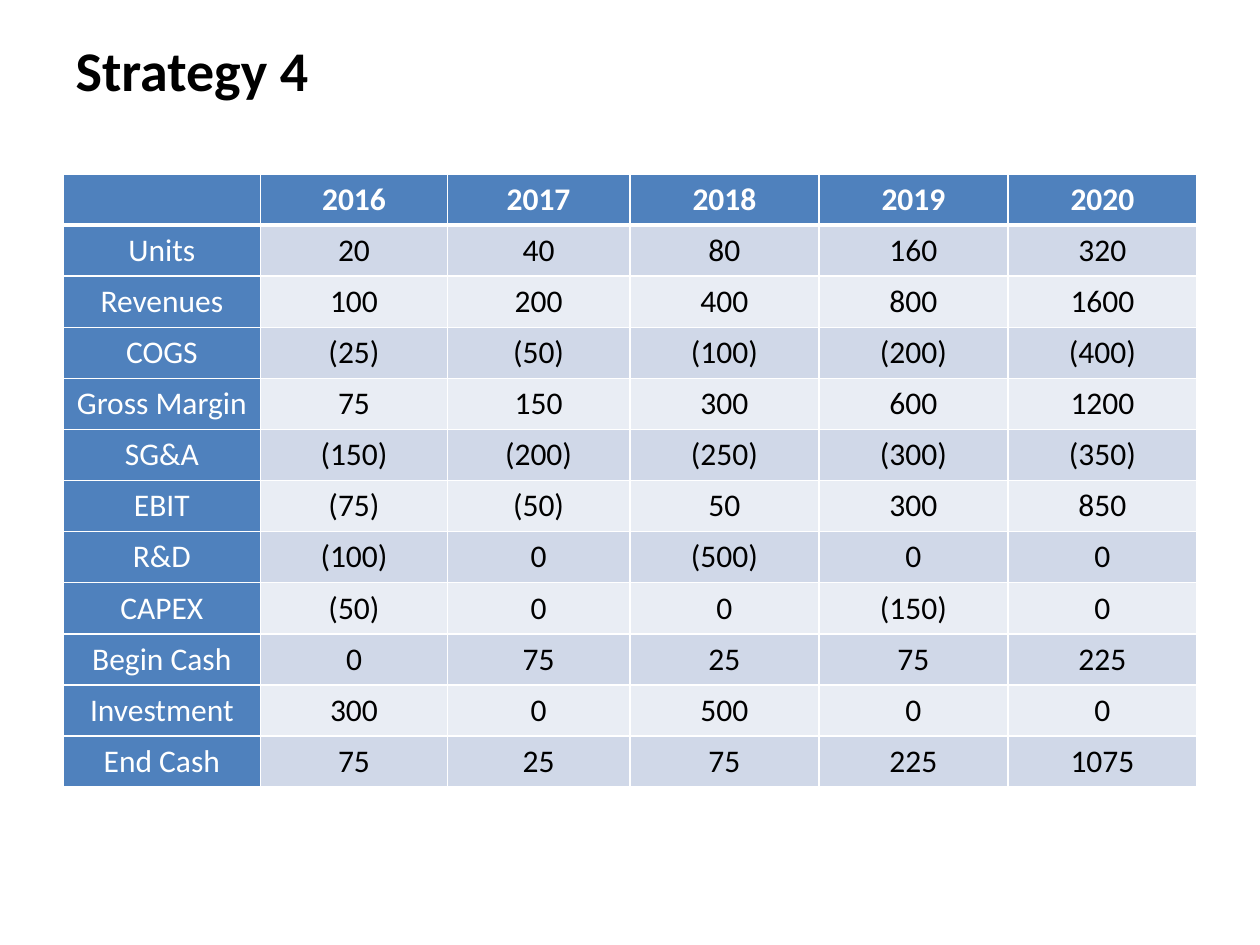
from dataclasses import dataclass

from lxml import etree
from pptx import Presentation
from pptx.dml.color import RGBColor
from pptx.enum.text import MSO_ANCHOR, PP_ALIGN
from pptx.oxml.ns import qn
from pptx.util import Pt

LEFT, CENTER = PP_ALIGN.LEFT, PP_ALIGN.CENTER
MIDDLE = MSO_ANCHOR.MIDDLE
TITLE_ONLY = 5


@dataclass
class Theme:
    font: str = "Calibri"
    title_size: float = 32
    table_size: float = 18
    text: str = "000000"
    light_text: str = "FFFFFF"
    header_fill: str = "4F81BD"
    bands: tuple = ("D0D8E8", "E9EDF4")
    border: str = "FFFFFF"
    thin_border: float = 1
    thick_border: float = 3


class SlideBuilder:
    def __init__(self, slide, theme):
        self.slide = slide
        self.theme = theme

    def format_runs(self, paragraph, size, color, bold=False):
        for run in paragraph.runs:
            run.font.name = self.theme.font
            run.font.size = Pt(size)
            run.font.bold = bold
            run.font.color.rgb = RGBColor.from_string(color)

    def title(self, text, left, top, width, height):
        shape = self.slide.shapes.title
        shape.left, shape.top = Pt(left), Pt(top)
        shape.width, shape.height = Pt(width), Pt(height)
        shape.text_frame.text = text
        shape.text_frame.vertical_anchor = MIDDLE
        paragraph = shape.text_frame.paragraphs[0]
        paragraph.alignment = LEFT
        self.format_runs(paragraph, self.theme.title_size, self.theme.text, bold=True)

    def cell_borders(self, cell, **widths):
        properties = cell._tc.get_or_add_tcPr()
        for side in ("L", "R", "T", "B"):
            width = widths.get(side, self.theme.thin_border)
            line = etree.SubElement(properties, qn(f"a:ln{side}"), w=str(Pt(width)))
            fill = etree.SubElement(line, qn("a:solidFill"))
            etree.SubElement(fill, qn("a:srgbClr"), val=self.theme.border)

    def table_cell(self, cell, text, row, column):
        theme = self.theme
        is_header = row == 0 or column == 0
        # Borders come before the fill in the cell properties
        if row == 0:
            self.cell_borders(cell, B=theme.thick_border)
        elif row == 1:
            self.cell_borders(cell, T=theme.thick_border)
        else:
            self.cell_borders(cell)
        cell.fill.solid()
        fill = theme.header_fill if is_header else theme.bands[(row - 1) % 2]
        cell.fill.fore_color.rgb = RGBColor.from_string(fill)
        cell.text_frame.text = text
        paragraph = cell.text_frame.paragraphs[0]
        paragraph.alignment = CENTER
        color = theme.light_text if is_header else theme.text
        self.format_runs(paragraph, theme.table_size, color, bold=row == 0)

    def table(self, rows, left, top, column_widths, row_height):
        table = self.slide.shapes.add_table(
            len(rows), len(column_widths), Pt(left), Pt(top),
            Pt(sum(column_widths)), Pt(row_height * len(rows))).table
        for column, width in zip(table.columns, column_widths):
            column.width = Pt(width)
        for row_index, values in enumerate(rows):
            table.rows[row_index].height = Pt(row_height)
            for column_index, text in enumerate(values):
                cell = table.cell(row_index, column_index)
                self.table_cell(cell, text, row_index, column_index)


FORECAST = [
    ("", "2016", "2017", "2018", "2019", "2020"),
    ("Units", "20", "40", "80", "160", "320"),
    ("Revenues", "100", "200", "400", "800", "1600"),
    ("COGS", "(25)", "(50)", "(100)", "(200)", "(400)"),
    ("Gross Margin", "75", "150", "300", "600", "1200"),
    ("SG&A", "(150)", "(200)", "(250)", "(300)", "(350)"),
    ("EBIT", "(75)", "(50)", "50", "300", "850"),
    ("R&D", "(100)", "0", "(500)", "0", "0"),
    ("CAPEX", "(50)", "0", "0", "(150)", "0"),
    ("Begin Cash", "0", "75", "25", "75", "225"),
    ("Investment", "300", "0", "500", "0", "0"),
    ("End Cash", "75", "25", "75", "225", "1075"),
]


def main():
    presentation = Presentation()
    presentation.slide_width, presentation.slide_height = Pt(720), Pt(540)
    slide = presentation.slides.add_slide(presentation.slide_layouts[TITLE_ONLY])
    builder = SlideBuilder(slide, Theme())

    # Heading
    builder.title("Strategy 4", left=36, top=4.5, width=501, height=70)

    # Five-year forecast
    builder.table(FORECAST, left=36, top=99.4,
                  column_widths=[113, 106.6, 104.4, 108, 108, 108], row_height=29.2)

    presentation.save("out.pptx")


if __name__ == "__main__":
    main()
